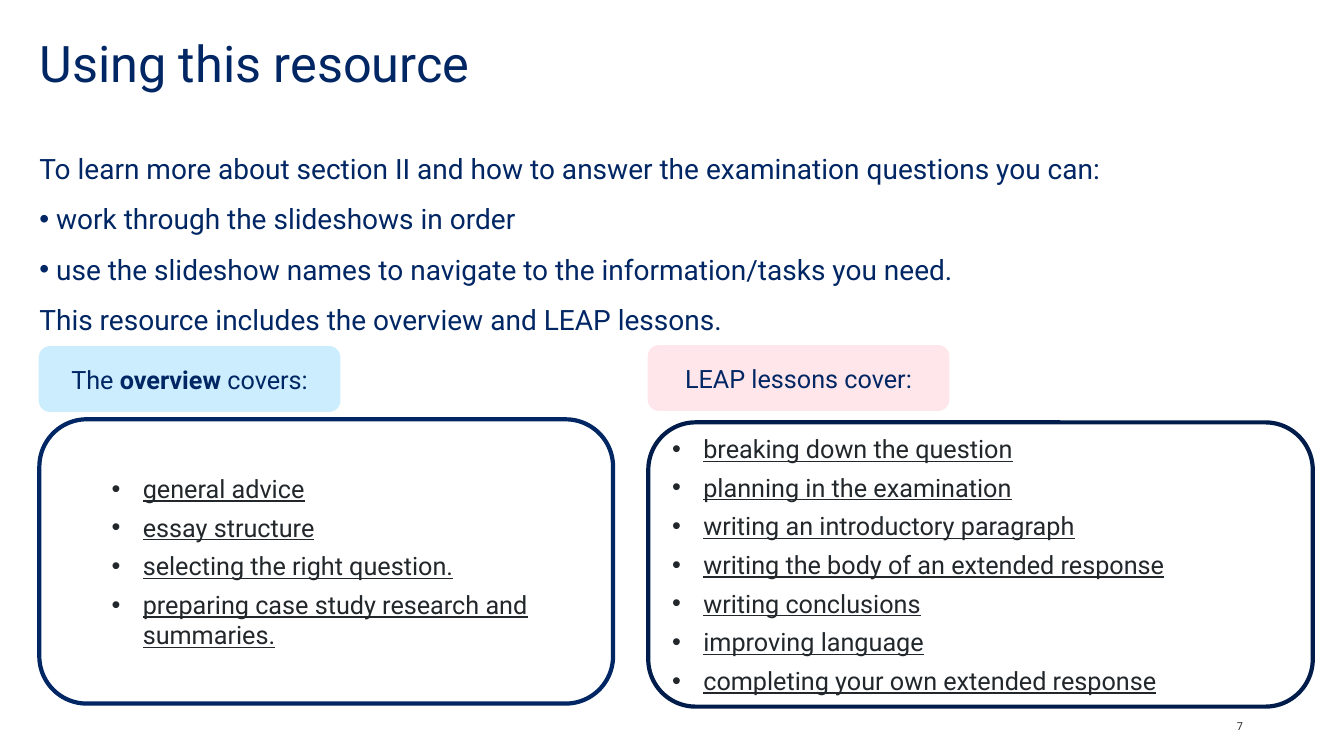
from dataclasses import dataclass

from lxml import etree
from pptx import Presentation
from pptx import util as u
from pptx.dml import color
from pptx.enum import shapes, text
from pptx.oxml import ns


@dataclass(frozen=True)
class Theme:
    font: str = "Roboto"
    navy: str = "002664"
    deep_navy: str = "001C4A"
    ink: str = "22272B"
    sky: str = "CBEDFD"
    blush: str = "FFE6EA"
    white: str = "FFFFFF"
    title_size: float = 36
    body_size: float = 20
    card_size: float = 18
    number_size: float = 7.8


THEME = Theme()


def rgb(value):
    return color.RGBColor.from_string(value)


def place(part, box):
    part.left, part.top, part.width, part.height = (u.Inches(n) for n in box)


def set_bullet(paragraph, fill, margin, hanging):
    props = paragraph._p.get_or_add_pPr()
    props.set("marL", str(u.Inches(margin)))
    props.set("indent", str(-u.Inches(hanging)))
    if not fill:
        etree.SubElement(props, ns.qn("a:buNone"))
        return
    tint = etree.SubElement(props, ns.qn("a:buClr"))
    etree.SubElement(tint, ns.qn("a:srgbClr"), val=fill)
    etree.SubElement(props, ns.qn("a:buFont"), typeface="Arial")
    etree.SubElement(props, ns.qn("a:buChar"), char="•")


def write(frame, wording, size, fill=THEME.navy, first=False, align=text.PP_ALIGN.LEFT,
          spacing=1.0, before=0, after=0, bullet=None, margin=0, hanging=0, underline=False):
    paragraph = frame.paragraphs[0] if first else frame.add_paragraph()
    paragraph.alignment = align
    paragraph.line_spacing = spacing
    paragraph.space_before = u.Pt(0 if first else before)
    paragraph.space_after = u.Pt(after)
    set_bullet(paragraph, bullet, margin, hanging)
    for index, piece in enumerate(wording.split("**")):
        run = paragraph.add_run()
        run.text = piece
        run.font.name = THEME.font
        run.font.size = u.Pt(size)
        run.font.bold = index % 2 == 1
        run.font.underline = underline
        run.font.color.rgb = rgb(fill)


def prepare_placeholder(placeholder, box):
    place(placeholder, box)
    frame = placeholder.text_frame
    frame.margin_left = frame.margin_top = frame.margin_right = frame.margin_bottom = 0
    frame.vertical_anchor = text.MSO_ANCHOR.TOP
    frame.auto_size = text.MSO_AUTO_SIZE.NONE
    frame.word_wrap = True
    return frame


def add_heading(slide, box):
    frame = prepare_placeholder(slide.shapes.title, box)
    write(frame, "Using this resource", THEME.title_size, first=True, spacing=0.9)


def add_introduction(slide, box):
    frame = prepare_placeholder(slide.placeholders[1], box)
    lines = [
        ("To learn more about section II and how to answer the examination questions you can:", None),
        (" work through the slideshows in order", THEME.navy),
        (" use the slideshow names to navigate to the information/tasks you need.", THEME.navy),
        ("This resource includes the overview and LEAP lessons.", None),
    ]
    for index, (line, bullet) in enumerate(lines):
        write(frame, line, THEME.body_size, first=index == 0, after=12, bullet=bullet)


def add_rounded_box(slide, box, fill, outline, weight):
    rounded = slide.shapes.add_shape(
        shapes.MSO_SHAPE.ROUNDED_RECTANGLE, *(u.Inches(n) for n in box))
    rounded.shadow.inherit = False
    rounded.fill.solid()
    rounded.fill.fore_color.rgb = rgb(fill)
    rounded.line.color.rgb = rgb(outline)
    rounded.line.width = u.Pt(weight)
    frame = rounded.text_frame
    frame.word_wrap = True
    frame.vertical_anchor = text.MSO_ANCHOR.MIDDLE
    return frame


def add_topic_column(slide, box, label, label_fill, topics, outline, drop, margin):
    left, top, width, height = box
    label_frame = add_rounded_box(slide, (left, top, 2.98, 0.64), label_fill, label_fill, 1)
    write(label_frame, label, THEME.card_size, first=True, align=text.PP_ALIGN.CENTER)
    topic_frame = add_rounded_box(
        slide, (left, top + drop, width, height - drop), THEME.white, outline, 3)
    for index, topic in enumerate(topics):
        write(topic_frame, topic, THEME.card_size, THEME.ink, first=index == 0, before=3,
              after=3, bullet=THEME.ink, margin=margin, hanging=0.31, underline=True)


def add_slide_number(slide, box):
    number = slide.shapes.add_textbox(*(u.Inches(n) for n in box))
    number.text_frame.word_wrap = True
    write(number.text_frame, "7", THEME.number_size, THEME.ink, first=True, spacing=0.7, after=6)


def main():
    deck = Presentation()
    deck.slide_width, deck.slide_height = u.Inches(13.33), u.Inches(7.5)
    slide = deck.slides.add_slide(deck.slide_layouts[1])
    slide.background.fill.solid()
    slide.background.fill.fore_color.rgb = rgb(THEME.white)
    add_heading(slide, (0.39, 0.39, 11.02, 1.1))
    add_introduction(slide, (0.39, 1.5, 12.56, 4.96))
    add_topic_column(
        slide, (0.39, 3.44, 5.69, 3.54), "The **overview** covers:", THEME.sky,
        ["general advice", "essay structure", "selecting the right question.",
         "preparing case study research and summaries."],
        THEME.navy, drop=0.72, margin=0.79)
    add_topic_column(
        slide, (6.43, 3.43, 6.59, 3.58), "LEAP lessons cover:", THEME.blush,
        ["breaking down the question", "planning in the examination",
         "writing an introductory paragraph", "writing the body of an extended response",
         "writing conclusions", "improving language", "completing your own extended response"],
        THEME.deep_navy, drop=0.76, margin=0.31)
    add_slide_number(slide, (12.17, 7.13, 0.79, 0.2))
    deck.save("out.pptx")


if __name__ == "__main__":
    main()
